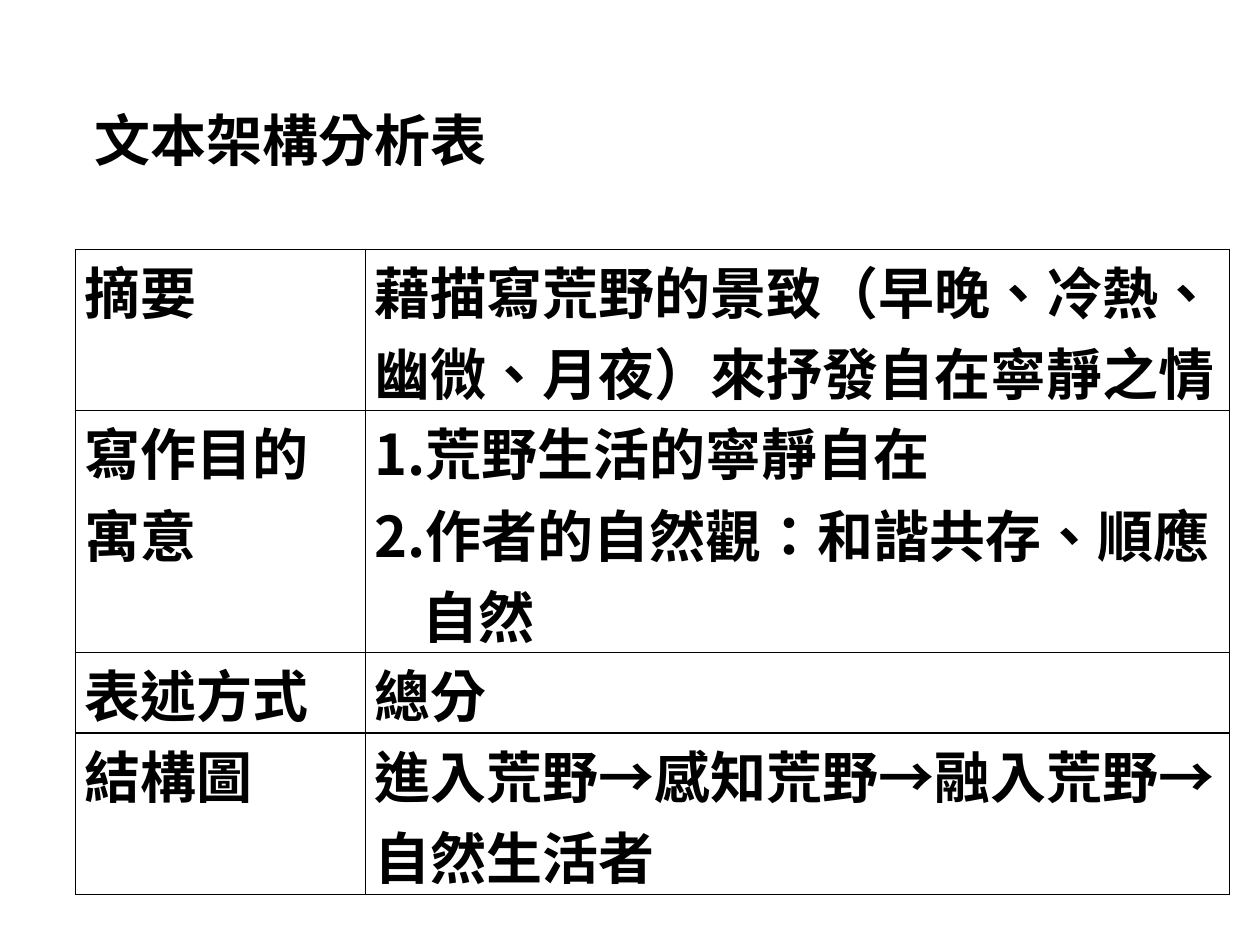
from lxml.etree import SubElement
from pptx import Presentation
from pptx.dml.color import RGBColor
from pptx.enum.lang import MSO_LANGUAGE_ID
from pptx.enum.text import MSO_ANCHOR
from pptx.oxml.ns import qn
from pptx.util import Inches, Pt

COLORS = {"ink": "000000", "paper": "FFFFFF"}
TYPEFACE = "Noto Sans CJK SC"
TEXT_FORMAT = {
    "name": TYPEFACE,
    "size": Pt(32),
    "bold": True,
    "language_id": MSO_LANGUAGE_ID.TRADITIONAL_CHINESE,
}
CELL_FORMAT = {
    "margin_left": Inches(0.07),
    "margin_right": Inches(0.07),
    "margin_top": 0,
    "margin_bottom": 0,
    "vertical_anchor": MSO_ANCHOR.TOP,
}
TITLE_FORMAT = {"word_wrap": True, "vertical_anchor": MSO_ANCHOR.MIDDLE}
TABLE_FORMAT = {"first_row": False, "horz_banding": False}

LINE_HEIGHT = 0.64
COLUMN_WIDTHS = [2.3, 6.86]
ANALYSIS = [
    (["摘要"], ["藉描寫荒野的景致（早晚、冷熱、幽微、月夜）來抒發自在寧靜之情"], False, 2),
    (["寫作目的", "寓意"], ["荒野生活的寧靜自在", "作者的自然觀：和諧共存、順應自然"], True, 3),
    (["表述方式"], ["總分"], False, 1),
    (["結構圖"], ["進入荒野→感知荒野→融入荒野→自然生活者"], False, 2),
]


def apply_format(target, values):
    for attribute, value in values.items():
        setattr(target, attribute, value)


class SlideBuilder:
    def __init__(self, slide):
        self.slide = slide
        slide.background.fill.solid()
        slide.background.fill.fore_color.rgb = RGBColor.from_string(COLORS["paper"])

    def add_lines(self, frame, lines, numbered=False):
        for index, line in enumerate(lines):
            paragraph = frame.add_paragraph() if index else frame.paragraphs[0]
            if numbered:
                self.number(paragraph)
            run = paragraph.add_run()
            run.text = line
            apply_format(run.font, TEXT_FORMAT)
            run.font.color.rgb = RGBColor.from_string(COLORS["ink"])
            SubElement(run._r.get_or_add_rPr(), qn("a:ea"), typeface=TYPEFACE)

    def number(self, paragraph):
        properties = paragraph._p.get_or_add_pPr()
        properties.set("marL", str(Inches(0.38)))
        properties.set("indent", str(-Inches(0.38)))
        SubElement(properties, qn("a:buFont"), typeface=TYPEFACE)
        SubElement(properties, qn("a:buAutoNum"), type="arabicPeriod")
        tabs = SubElement(properties, qn("a:tabLst"))
        SubElement(tabs, qn("a:tab"), pos=str(Inches(0.25)), algn="l")

    def title(self, text, left, top, width, height):
        box = self.slide.shapes.add_textbox(
            Inches(left), Inches(top), Inches(width), Inches(height))
        apply_format(box.text_frame, TITLE_FORMAT)
        self.add_lines(box.text_frame, [text])
        box.text_frame.paragraphs[0].line_spacing = 0.9

    def cell(self, cell, lines, numbered=False):
        apply_format(cell, CELL_FORMAT)
        self.add_lines(cell.text_frame, lines, numbered)
        properties = cell._tc.get_or_add_tcPr()
        for side in ("lnL", "lnR", "lnT", "lnB"):
            border = SubElement(properties, qn(f"a:{side}"), w=str(Pt(1)))
            fill = SubElement(border, qn("a:solidFill"))
            SubElement(fill, qn("a:srgbClr"), val=COLORS["ink"])
        cell.fill.background()

    def table(self, rows, left, top):
        heights = [Inches(line_count * LINE_HEIGHT) for *_, line_count in rows]
        table = self.slide.shapes.add_table(
            len(rows), len(COLUMN_WIDTHS), Inches(left), Inches(top),
            Inches(sum(COLUMN_WIDTHS)), sum(heights)).table
        apply_format(table, TABLE_FORMAT)
        for column, width in zip(table.columns, COLUMN_WIDTHS):
            column.width = Inches(width)
        for index, (label, content, numbered, _) in enumerate(rows):
            table.rows[index].height = heights[index]
            self.cell(table.cell(index, 0), label)
            self.cell(table.cell(index, 1), content, numbered)


def main():
    presentation = Presentation()
    presentation.slide_width = Inches(10)
    presentation.slide_height = Inches(7.5)
    builder = SlideBuilder(presentation.slides.add_slide(presentation.slide_layouts[6]))
    builder.title("文本架構分析表", 0.65, 0.65, 8.62, 0.98)
    builder.table(ANALYSIS, 0.6, 1.98)
    presentation.save("out.pptx")


if __name__ == "__main__":
    main()
